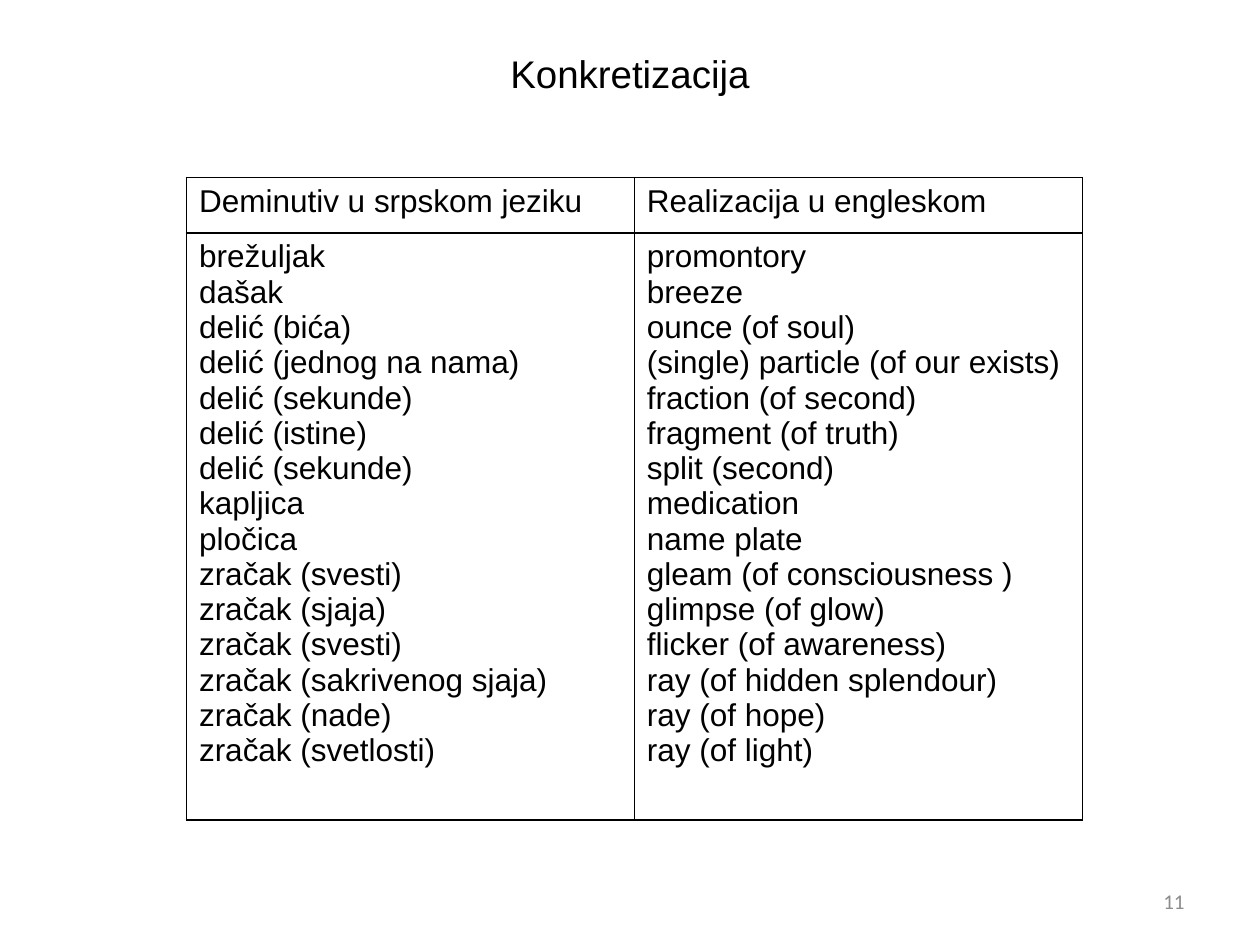
import dataclasses

import lxml.etree
import pptx
import pptx.dml.color
import pptx.enum.text
import pptx.oxml.ns
import pptx.util

Inches = pptx.util.Inches
Align = pptx.enum.text.PP_ALIGN
Anchor = pptx.enum.text.MSO_ANCHOR


@dataclasses.dataclass(frozen=True)
class Theme:
    ink: str = "000000"
    muted: str = "8C8C8C"
    body_font: str = "Arial"
    number_font: str = "Calibri"
    title_size: int = 22
    body_size: int = 18
    number_size: int = 12
    border_width: int = 1


THEME = Theme()

HEADINGS = ("Deminutiv u srpskom jeziku", "Realizacija u engleskom")
PAIRS = [
    ("brežuljak", "promontory"),
    ("dašak", "breeze"),
    ("delić (bića)", "ounce (of soul)"),
    ("delić (jednog na nama)", "(single) particle (of our exists)"),
    ("delić (sekunde)", "fraction (of second)"),
    ("delić (istine)", "fragment (of truth)"),
    ("delić (sekunde)", "split (second)"),
    ("kapljica", "medication"),
    ("pločica", "name plate"),
    ("zračak (svesti)", "gleam (of consciousness )"),
    ("zračak (sjaja)", "glimpse (of glow)"),
    ("zračak (svesti)", "flicker (of awareness)"),
    ("zračak (sakrivenog sjaja)", "ray (of hidden splendour)"),
    ("zračak (nade)", "ray (of hope)"),
    ("zračak (svetlosti)", "ray (of light)"),
]


def write_text(frame, lines, size=THEME.body_size, font=THEME.body_font,
               color=THEME.ink, align=Align.LEFT):
    frame.word_wrap = True
    for index, line in enumerate(lines):
        para = frame.paragraphs[0] if index == 0 else frame.add_paragraph()
        para.alignment = align
        span = para.add_run()
        span.text = line
        span.font.size = pptx.util.Pt(size)
        span.font.name = font
        span.font.bold = False
        span.font.color.rgb = pptx.dml.color.RGBColor.from_string(color)


def add_borders(cell):
    qn = pptx.oxml.ns.qn
    properties = cell._tc.get_or_add_tcPr()
    width = str(pptx.util.Pt(THEME.border_width))
    for side in ("lnL", "lnR", "lnT", "lnB"):
        line = lxml.etree.SubElement(properties, qn(f"a:{side}"), w=width)
        fill = lxml.etree.SubElement(line, qn("a:solidFill"))
        lxml.etree.SubElement(fill, qn("a:srgbClr"), val=THEME.ink)


def place_title(page, box, text):
    title = page.shapes.title
    title.left, title.top, title.width, title.height = box
    frame = title.text_frame
    frame.auto_size = pptx.enum.text.MSO_AUTO_SIZE.NONE
    frame.vertical_anchor = Anchor.TOP
    frame.margin_top = Inches(0.4)
    write_text(frame, [text], size=THEME.title_size, align=Align.CENTER)


def place_word_table(page, box, row_heights):
    left, top, width, height = box
    columns = list(zip(*PAIRS))
    table = page.shapes.add_table(
        len(row_heights), len(columns), left, top, width, height).table
    for row, row_height in zip(table.rows, row_heights):
        row.height = row_height
    for index, (heading, words) in enumerate(zip(HEADINGS, columns)):
        table.columns[index].width = width // len(columns)
        for row_index, lines in enumerate(([heading], words)):
            cell = table.cell(row_index, index)
            add_borders(cell)
            cell.fill.background()
            write_text(cell.text_frame, lines)


def place_page_number(page, box, number):
    frame = page.shapes.add_textbox(*box).text_frame
    frame.vertical_anchor = Anchor.MIDDLE
    write_text(frame, [str(number)], size=THEME.number_size,
               font=THEME.number_font, color=THEME.muted, align=Align.RIGHT)


def main():
    deck = pptx.Presentation()
    deck.slide_width, deck.slide_height = Inches(10), Inches(7.5)
    page = deck.slides.add_slide(deck.slide_layouts.get_by_name("Title Only"))
    place_title(page, (0, 0, deck.slide_width, Inches(3.33)), "Konkretizacija")
    place_word_table(
        page, (Inches(1.48), Inches(1.41), Inches(7.11), Inches(5.1)),
        (Inches(0.44), Inches(4.66)))
    place_page_number(
        page, (Inches(7.17), Inches(6.95), Inches(2.33), Inches(0.4)), 11)
    deck.save("out.pptx")


if __name__ == "__main__":
    main()
